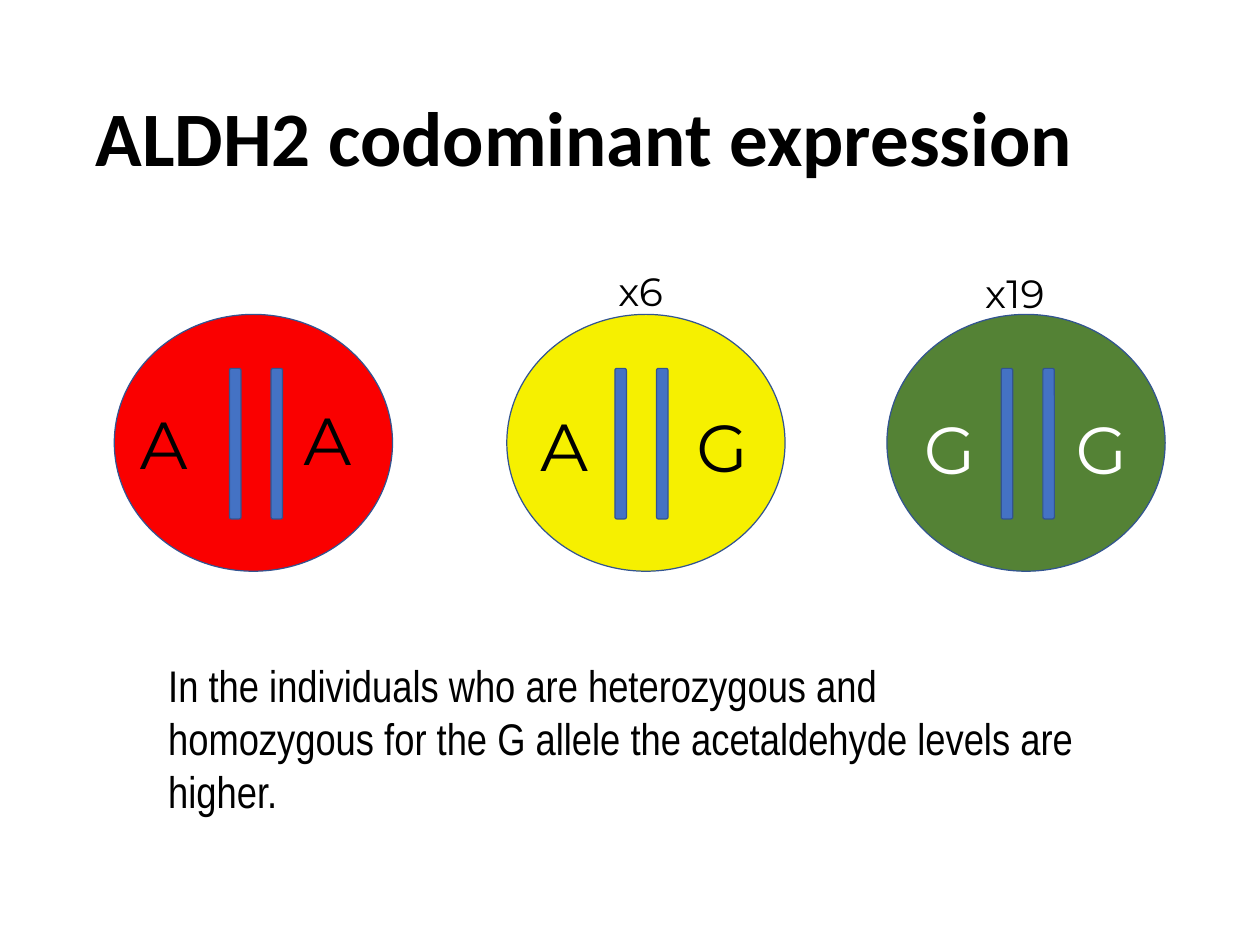
from pptx import Presentation
from pptx.dml.color import RGBColor
from pptx.enum.shapes import MSO_SHAPE
from pptx.enum.text import MSO_ANCHOR, MSO_AUTO_SIZE, PP_ALIGN
from pptx.util import Pt

OVAL, BAR = MSO_SHAPE.OVAL, MSO_SHAPE.ROUNDED_RECTANGLE
LEFT = PP_ALIGN.LEFT
TOP, MIDDLE = MSO_ANCHOR.TOP, MSO_ANCHOR.MIDDLE
NO_FIT, GROW = MSO_AUTO_SIZE.NONE, MSO_AUTO_SIZE.SHAPE_TO_FIT_TEXT
PX = 9144
TITLE_ONLY = 5
COLORS = {
    "black": "000000",
    "white": "FFFFFF",
    "red": "FA0000",
    "yellow": "F6F000",
    "green": "548235",
    "bar": "4472C4",
    "outline": "325491",
}
CELL_TOP, CELL_WIDTH, CELL_HEIGHT = 355, 314, 290
BAR_TOP, BAR_WIDTH, BAR_HEIGHT, BAR_PITCH = 61, 13, 170, 47
GENOTYPES = [
    {"left": 129, "fill": "red", "bar_left": 130,
     "alleles": [("A", 19, 95), ("A", 204, 91)]},
    {"left": 572, "fill": "yellow", "bar_left": 122,
     "alleles": [("A", 28, 97), ("G", 204, 99)], "level": ("x6", 116, -58)},
    {"left": 1001, "fill": "green", "bar_left": 129, "ink": "white",
     "alleles": [("G", 32, 101), ("G", 203, 101)], "level": ("x19", 101, -56)},
]


def color(name):
    """Return the named colour."""
    return RGBColor.from_string(COLORS[name])


def place(shape, box):
    """Move a shape to a box given in px."""
    shape.left, shape.top, shape.width, shape.height = (length * PX for length in box)


def write(shape, text, size, font, ink="black", bold=False, anchor=TOP,
          fit=GROW, spacing=None):
    """Write one formatted paragraph into a shape."""
    frame = shape.text_frame
    frame.word_wrap = True
    frame.auto_size = fit
    frame.vertical_anchor = anchor
    paragraph = frame.paragraphs[0]
    paragraph.alignment = LEFT
    paragraph.line_spacing = spacing
    run = paragraph.add_run()
    run.text = text
    run.font.size = Pt(size)
    run.font.name = font
    run.font.bold = bold
    run.font.color.rgb = color(ink)


def add_text(slide, box, text, **style):
    """Add a text box with one formatted paragraph."""
    shape = slide.shapes.add_textbox(0, 0, 0, 0)
    write(shape, text, **style)
    place(shape, box)


def add_outlined(slide, kind, box, fill):
    """Add a filled shape with a thin outline."""
    shape = slide.shapes.add_shape(kind, *(length * PX for length in box))
    shape.shadow.inherit = False
    shape.fill.solid()
    shape.fill.fore_color.rgb = color(fill)
    shape.line.color.rgb = color("outline")
    shape.line.width = Pt(1)


def add_title(slide, box):
    """Fill and place the title."""
    title = slide.shapes.title
    place(title, box)
    write(title, "ALDH2 codominant expression", size=62.6, font="Calibri",
          bold=True, anchor=MIDDLE, fit=NO_FIT, spacing=0.9)


def add_cell(slide, box, fill, bar_left, alleles, ink="black", level=None):
    """Draw a cell with its chromosome pair, alleles and acetaldehyde level."""
    left, top = box[:2]
    add_outlined(slide, OVAL, box, fill)
    for index in range(2):
        bar_box = (left + bar_left + index * BAR_PITCH, top + BAR_TOP,
                   BAR_WIDTH, BAR_HEIGHT)
        add_outlined(slide, BAR, bar_box, "bar")
    for allele, across, down in alleles:
        add_text(slide, (left + across, top + down, 97, 101), allele,
                 size=54, font="Montserrat", ink=ink)
    if level:
        text, across, down = level
        add_text(slide, (left + across, top + down, 121, 64), text,
                 size=32, font="Montserrat")


def add_conclusion(slide, box):
    """Add the closing statement."""
    add_text(slide, box,
             "In the individuals who are heterozygous and homozygous for the "
             "G allele the acetaldehyde levels are higher.",
             size=36, font="Arial Narrow")


def main():
    """Build and save the slide."""
    presentation = Presentation()
    presentation.slide_width = 1422 * PX
    presentation.slide_height = 1067 * PX
    slide = presentation.slides.add_slide(presentation.slide_layouts[TITLE_ONLY])
    add_title(slide, (98, 57, 1227, 206))
    for genotype in GENOTYPES:
        details = dict(genotype)
        box = (details.pop("left"), CELL_TOP, CELL_WIDTH, CELL_HEIGHT)
        add_cell(slide, box, **details)
    add_conclusion(slide, (180, 738, 1044, 192))
    presentation.save("out.pptx")


if __name__ == "__main__":
    main()
